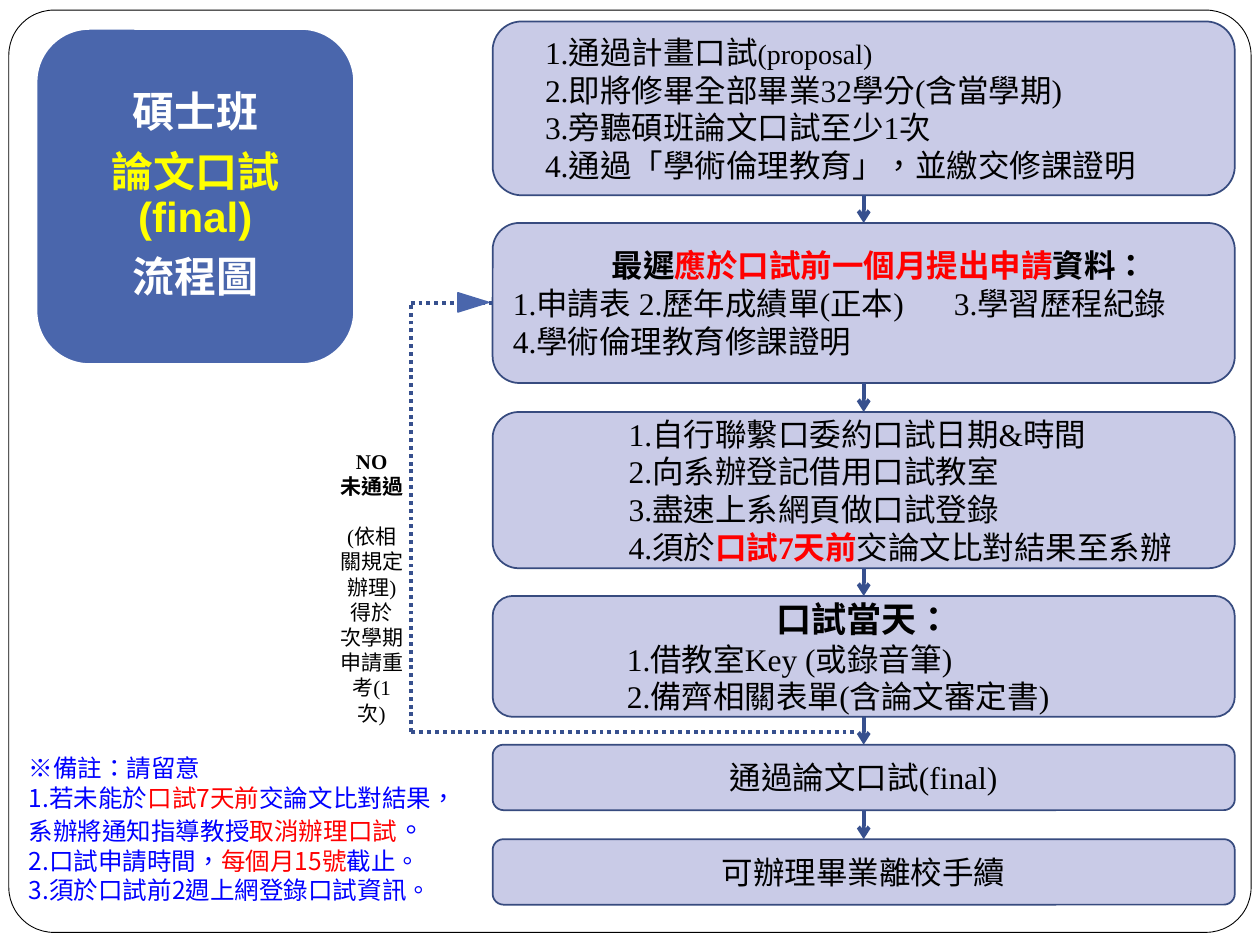
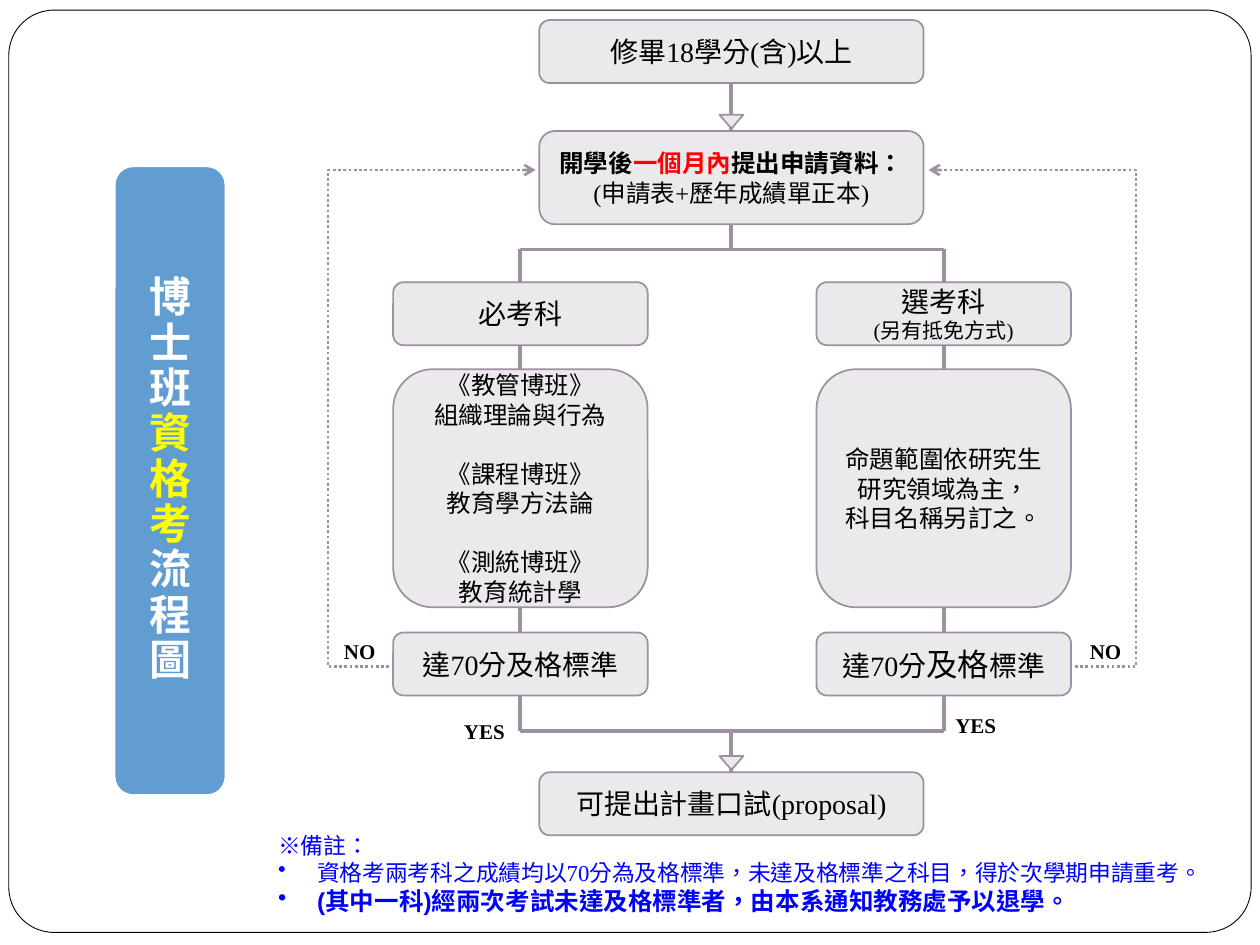
import pptx
import pptx.util
import pptx.dml.color
import pptx.enum.dml
import pptx.enum.lang
import pptx.enum.shapes
import pptx.enum.text
import pptx.oxml.ns
from lxml import etree

Inches, Pt = pptx.util.Inches, pptx.util.Pt
RGBColor = pptx.dml.color.RGBColor
SHAPE = pptx.enum.shapes.MSO_SHAPE
CONNECTOR = pptx.enum.shapes.MSO_CONNECTOR
ALIGN = pptx.enum.text.PP_ALIGN
ANCHOR = pptx.enum.text.MSO_ANCHOR
AUTO_SIZE = pptx.enum.text.MSO_AUTO_SIZE
DOTTED = pptx.enum.dml.MSO_LINE.ROUND_DOT
ZH_TW = pptx.enum.lang.MSO_LANGUAGE_ID.TRADITIONAL_CHINESE
qn = pptx.oxml.ns.qn

WHITE = RGBColor(0xFF, 0xFF, 0xFF)
BLACK = RGBColor(0, 0, 0)
RED = RGBColor(0xFF, 0, 0)
YELLOW = RGBColor(0xFF, 0xFF, 0)
NOTE_BLUE = RGBColor(0, 0, 0xFF)
MASTER_CARD = RGBColor(0x4A, 0x66, 0xAC)
MASTER_FILL = RGBColor(0xC9, 0xCB, 0xE7)
MASTER_EDGE = RGBColor(0x37, 0x4B, 0x7F)
MASTER_ARROW = RGBColor(0x37, 0x50, 0x8E)
DOCTOR_CARD = RGBColor(0x62, 0x9D, 0xD1)
DOCTOR_FILL = RGBColor(0xEB, 0xE9, 0xEC)
DOCTOR_EDGE = RGBColor(0x9D, 0x90, 0xA0)

SERIF, SANS, NOTE_FONT = "Times New Roman", "Arial", "Noto Sans CJK SC"
HOT = dict(color=RED)
STRONG = dict(color=RED, bold=True)
BOLD = dict(bold=True)
LEFT = dict(align=ALIGN.LEFT)
ITEM = dict(align=ALIGN.LEFT, margin=1.17, indent=-0.25)
INTRO = dict(align=ALIGN.LEFT, margin=0.5, indent=-0.25)
BULLET = dict(margin=0.31, indent=-0.31, bullet="•")

MASTER_TITLE = [
    ["碩士班"],
    [("論文口試(final)", dict(color=YELLOW))],
    ["流程圖"],
]
MASTER_STEPS = [
    (0.17, 1.38, [
        (["1.通過計畫口試", ("(proposal)", dict(size=16))], INTRO),
        (["2.即將修畢全部畢業32學分(含當學期)"], INTRO),
        (["3.旁聽碩班論文口試至少1次"], INTRO),
        (["4.通過「學術倫理教育」，並繳交修課證明"], INTRO),
    ]),
    (1.77, 1.27, [
        ([("最遲", BOLD), ("應於口試前一個月提出申請", STRONG), ("資料：", BOLD)],
         dict(margin=0.25)),
        (["1.申請表\t2.歷年成績單(正本)\t3.學習歷程紀錄"],
         dict(align=ALIGN.LEFT, tabs=(1.29, 3.88))),
        (["4.學術倫理教育修課證明"], LEFT),
    ]),
    (3.27, 1.24, [
        (["1.自行聯繫口委約口試日期&時間"], ITEM),
        (["2.向系辦登記借用口試教室"], ITEM),
        (["3.盡速上系網頁做口試登錄"], ITEM),
        (["4.須於", ("口試7天前", STRONG), "交論文比對結果至系辦"], ITEM),
    ]),
    (4.73, 0.96, [
        [("口試當天：", dict(size=20, bold=True))],
        (["1.借教室Key (或錄音筆)"], ITEM),
        (["2.備齊相關表單(含論文審定書)"], ITEM),
    ]),
    (5.91, 0.52, [["通過論文口試(final)"]]),
    (6.66, 0.52, [["可辦理畢業離校手續"]]),
]
RETRY = [
    [("NO", BOLD)],
    [("未通過", BOLD)],
    (["(依相關規定辦理)得於"], dict(before=14.3)),
    ["次學期申請重考(1次)"],
]
MASTER_NOTE = [
    ["※備註：請留意"],
    ["1.若未能於", ("口試7天前", HOT), "交論文比對結果，系辦將通知指導教授",
     ("取消辦理口試", HOT), ("。", dict(size=16))],
    ["2.口試申請時間，", ("每個月15號", HOT), "截止。"],
    ["3.須於口試前2週上網登錄口試資訊。"],
]

DOCTOR_TITLE = [["博士班", ("資格考", dict(color=YELLOW)), "流程圖"]]
CENTRE_STEPS = [
    (0.16, 0.5, 16, [["修畢18學分(含)以上"]]),
    (1.04, 0.74, 14, [
        [("開學後", BOLD), ("一個月內", STRONG), ("提出申請資料：", BOLD)],
        ["(申請表+歷年成績單正本)"],
    ]),
    (6.13, 0.5, 16, [["可提出計畫口試(proposal)"]]),
]
COLUMN_ROWS = [(2.24, 0.5, 16), (2.93, 1.89, 14), (5.02, 0.5, 16)]
COLUMNS = [
    (3.12, [
        [["必考科"]],
        [["《教管博班》"], ["組織理論與行為"],
         (["《課程博班》"], dict(before=16.9)), ["教育學方法論"],
         (["《測統博班》"], dict(before=16.9)), ["教育統計學"]],
        [["達70分及格標準"]],
    ]),
    (6.48, [
        [["選考科"], [("(另有抵免方式)", dict(size=12))]],
        [["命題範圍依研究生研究領域為主，"], ["科目名稱另訂之。"]],
        [["達70分", ("及格", dict(size=18)), "標準"]],
    ]),
]
RETRY_PATHS = [((3.13, 5.29), (4.25, 1.35)), ((8.49, 5.29), (7.37, 1.35))]
ANSWERS = [("NO", 2.59, 5.02), ("NO", 8.51, 5.02), ("YES", 3.58, 5.65), ("YES", 7.48, 5.61)]
DOCTOR_NOTE = [
    ["※備註："],
    (["資格考兩考科之成績均以70分為及格標準，未達及格標準之科目，得於次學期申請重考。"], BULLET),
    ([("(其中一科)", dict(size=14, bold=True, font=SANS)),
      ("經兩次考試未達及格標準者，由本系通知教務處予以退學。", dict(size=14, bold=True))], BULLET),
]


def write(tf, paras, size=18, color=BLACK, font=SERIF, bold=False, align=ALIGN.CENTER,
          anchor=ANCHOR.MIDDLE, spacing=None, after=0):
    tf.word_wrap = True
    tf.vertical_anchor = anchor
    for i, para in enumerate(paras):
        runs, layout = para if isinstance(para, tuple) else (para, {})
        p = tf.paragraphs[0] if i == 0 else tf.add_paragraph()
        p.alignment = layout.get("align", align)
        p.space_before = Pt(layout.get("before", 0))
        p.space_after = Pt(after)
        if spacing:
            p.line_spacing = spacing
        pPr = p._p.get_or_add_pPr()
        pPr.set("marL", str(Inches(layout.get("margin", 0))))
        pPr.set("indent", str(Inches(layout.get("indent", 0))))
        if "bullet" in layout:
            etree.SubElement(pPr, qn("a:buChar"), char=layout["bullet"])
        if "tabs" in layout:
            tabs = etree.SubElement(pPr, qn("a:tabLst"))
            for pos in layout["tabs"]:
                etree.SubElement(tabs, qn("a:tab"), pos=str(Inches(pos)), algn="l")
        for run in runs:
            text, fmt = run if isinstance(run, tuple) else (run, {})
            r = p.add_run()
            r.text = text
            r.font.size = Pt(fmt.get("size", size))
            r.font.bold = fmt.get("bold", bold)
            r.font.name = fmt.get("font", font)
            r.font.color.rgb = fmt.get("color", color)
            r.font.language_id = ZH_TW


def add_box(s, at, fill, edge, weight=1, kind=SHAPE.ROUNDED_RECTANGLE):
    sp = s.shapes.add_shape(kind, *map(Inches, at))
    sp.shadow.inherit = False
    sp.fill.solid()
    sp.fill.fore_color.rgb = fill
    sp.line.color.rgb = edge
    sp.line.width = Pt(weight)
    return sp


def add_text(s, at, paras, **fmt):
    sp = s.shapes.add_textbox(*map(Inches, at))
    write(sp.text_frame, paras, anchor=ANCHOR.TOP, **fmt)
    return sp


def add_line(s, start, end, color, weight=2.25, dotted=False, arrow=False, bend=None):
    joins = [isinstance(end_at[0], (int, float)) for end_at in (start, end)]
    a = start if joins[0] else (0, 0)
    b = end if joins[1] else (0, 0)
    kind = CONNECTOR.STRAIGHT if bend is None else CONNECTOR.ELBOW
    c = s.shapes.add_connector(kind, *map(Inches, (*a, *b)))
    if not joins[0]:
        c.begin_connect(*start)
    if not joins[1]:
        c.end_connect(*end)
    c.line.color.rgb = color
    c.line.width = Pt(weight)
    if dotted:
        c.line.dash_style = DOTTED
    if arrow:
        etree.SubElement(c.line._get_or_add_ln(), qn("a:tailEnd"), type="arrow")
    spPr = c._element.spPr
    if bend is not None:
        guides = spPr.find(qn("a:prstGeom")).get_or_add_avLst()
        etree.SubElement(guides, qn("a:gd"), name="adj1", fmla=f"val {round(bend * 100000)}")
    etree.SubElement(spPr, qn("a:effectLst"))
    return c


def add_title(s, card, inset, fill, paras):
    add_box(s, card, fill, WHITE)
    x, y, w, h = card
    title = s.shapes.title
    title.left, title.top = Inches(x + inset), Inches(y + inset)
    title.width, title.height = Inches(w - 2 * inset), Inches(h - 2 * inset)
    tf = title.text_frame
    tf.auto_size = AUTO_SIZE.NONE
    tf.margin_left = tf.margin_right = tf.margin_top = tf.margin_bottom = Inches(0.1)
    write(tf, paras, size=24, color=WHITE, font=SANS, bold=True, spacing=0.9, after=8.4)
    s.shapes._spTree.append(title._element)


def add_frame(s):
    frame = add_box(s, (0.07, 0.08, 9.86, 7.32), WHITE, BLACK, 0.5)
    frame.adjustments[0] = 0.049
    s.slide_layout.shapes._spTree.insert(2, frame._element)


def build_master_flow(s):
    add_title(s, (0.29, 0.23, 2.52, 2.66), 0.12, MASTER_CARD, MASTER_TITLE)
    steps = []
    for top, height, paras in MASTER_STEPS:
        sp = add_box(s, (3.91, top, 5.89, height), MASTER_FILL, MASTER_EDGE)
        write(sp.text_frame, paras)
        steps.append(sp)
    for upper, lower in zip(steps, steps[1:]):
        add_line(s, (upper, 2), (lower, 0), MASTER_ARROW, arrow=True)
    apply_step = steps[1]
    loop_x, loop_bottom = 3.26, 5.81
    loop_top = (apply_step.top + apply_step.height / 2) / Inches(1)
    corners = [(6.78, loop_bottom), (loop_x, loop_bottom), (loop_x, loop_top), (apply_step, 1)]
    for start, end in zip(corners, corners[1:]):
        add_line(s, start, end, MASTER_ARROW, dotted=True)
    head = add_box(s, (3.68, 2.28, 0.15, 0.24), MASTER_CARD, MASTER_CARD,
                   kind=SHAPE.ISOSCELES_TRIANGLE)
    head.rotation = 90
    add_text(s, (2.59, 3.51, 0.72, 0.56), RETRY, size=12)
    add_text(s, (0.13, 5.93, 3.46, 1.35), MASTER_NOTE, size=14, color=NOTE_BLUE,
             font=NOTE_FONT, align=ALIGN.LEFT)


def build_doctor_flow(s):
    add_title(s, (0.91, 1.32, 0.88, 4.99), 0.04, DOCTOR_CARD, DOCTOR_TITLE)
    note = add_text(s, (2.11, 6.55, 7.53, 0.77), DOCTOR_NOTE, size=13, color=NOTE_BLUE,
                    align=ALIGN.LEFT)
    note.fill.solid()
    note.fill.fore_color.rgb = WHITE

    def add_step(at, paras, size):
        sp = add_box(s, at, DOCTOR_FILL, DOCTOR_EDGE)
        write(sp.text_frame, paras, size=size)
        return sp

    credits, apply_step, proposal = [
        add_step((4.28, top, 3.05, height), paras, size)
        for top, height, size, paras in CENTRE_STEPS]
    split_y, merge_y, centre_x = 1.98, 5.8, 4.28 + 3.05 / 2
    add_line(s, (credits, 2), (apply_step, 0), DOCTOR_EDGE)
    add_line(s, (apply_step, 2), (centre_x, split_y), DOCTOR_EDGE)
    add_line(s, (centre_x, merge_y), (proposal, 0), DOCTOR_EDGE)
    column_xs = []
    for left, texts in COLUMNS:
        x = left + 2.02 / 2
        column_xs.append(x)
        subject, scope, passing = [
            add_step((left, top, 2.02, height), paras, size)
            for (top, height, size), paras in zip(COLUMN_ROWS, texts)]
        for start, end in [((x, split_y), (subject, 0)), ((subject, 2), (scope, 0)),
                           ((scope, 2), (passing, 0)), ((passing, 2), (x, merge_y))]:
            add_line(s, start, end, DOCTOR_EDGE)
    for y in (split_y, merge_y):
        add_line(s, (column_xs[0], y), (column_xs[1], y), DOCTOR_EDGE)
    for top in (0.91, 6):
        head = add_box(s, (centre_x - 0.095, top, 0.19, 0.11), DOCTOR_FILL, DOCTOR_EDGE,
                       kind=SHAPE.ISOSCELES_TRIANGLE)
        head.rotation = 180
    for start, end in RETRY_PATHS:
        add_line(s, start, end, DOCTOR_EDGE, 1.5, dotted=True, arrow=True, bend=-0.471)
    for text, left, top in ANSWERS:
        add_text(s, (left, top, 0.53, 0.3), [[text]], size=12, bold=True)


def main():
    prs = pptx.Presentation()
    prs.slide_width, prs.slide_height = Inches(10), Inches(7.5)
    layout = prs.slide_layouts[5]
    master_slide, doctor_slide = [prs.slides.add_slide(layout) for _ in range(2)]
    add_frame(master_slide)
    build_master_flow(master_slide)
    build_doctor_flow(doctor_slide)
    prs.save("out.pptx")


if __name__ == "__main__":
    main()
